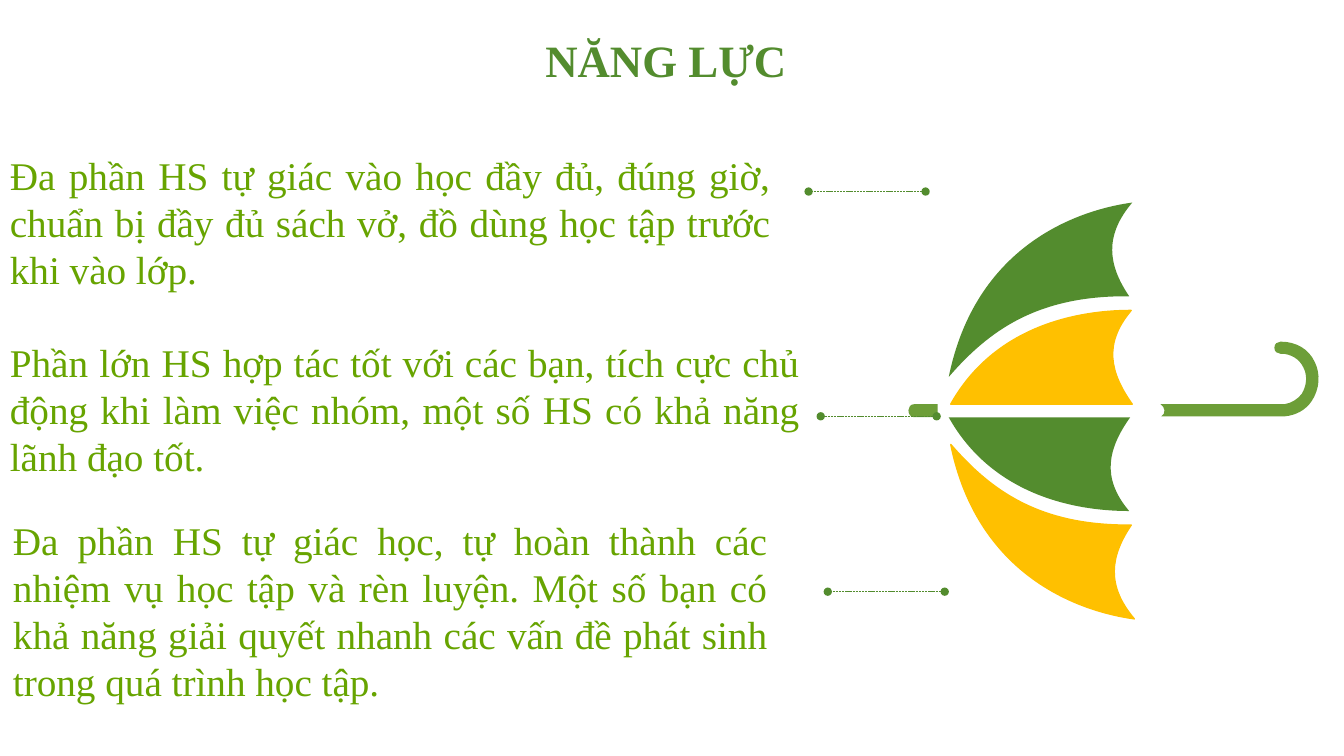
import pptx
import pptx.util
import pptx.dml.color
import pptx.enum.dml
import pptx.enum.shapes
import pptx.enum.text
import pptx.oxml
import pptx.oxml.ns
from lxml import etree

PX = 9144
SLIDE_WIDTH, SLIDE_HEIGHT = 1333, 750
FONT = "Times New Roman"
DARK_GREEN = pptx.dml.color.RGBColor(0x53, 0x8C, 0x2E)
YELLOW = pptx.dml.color.RGBColor(0xFF, 0xC0, 0x00)
HANDLE_GREEN = pptx.dml.color.RGBColor(0x6D, 0x9E, 0x38)
TEXT_GREEN = pptx.dml.color.RGBColor(0x67, 0xA4, 0x00)

MIRROR_SUM = 815

OUTER_PANEL = [(941, 374), (967, 246, 1065, 209, 1123, 201),
               (1095, 234, 1099, 263, 1120, 294), (1028, 293, 980, 329, 941, 374)]
INNER_PANEL = [(941, 401), (983, 326, 1062, 308, 1120, 308),
               (1092, 341, 1099, 370, 1121, 401)]
TIP = [(907, 401), (930, 401), (930, 414), (907, 414),
       (903, 414, 901, 411, 901, 407), (901, 404, 903, 401, 907, 401)]
HOOK = [(1270, 339), (1271, 339), (1285, 339, 1298, 346, 1304, 359),
        (1310, 371, 1309, 386, 1301, 398), (1295, 407, 1285, 412, 1275, 413),
        (1152, 413), (1154, 412, 1155, 410, 1155, 407),
        (1155, 405, 1153, 402, 1151, 401), (1267, 401), (1274, 401),
        (1281, 400, 1287, 396, 1291, 391), (1296, 383, 1297, 373, 1293, 365),
        (1289, 356, 1280, 351, 1271, 351), (1270, 351),
        (1267, 351, 1264, 349, 1264, 345), (1264, 341, 1267, 339, 1270, 339)]

PARAGRAPHS = [
    (0, 145, 774, 151, "Đa phần HS tự giác vào học đầy đủ, đúng giờ, chuẩn bị đầy đủ "
                       "sách vở, đồ dùng học tập trước khi vào lớp."),
    (0, 331, 803, 151, "Phần lớn HS hợp tác tốt với các bạn, tích cực chủ động khi làm "
                       "việc nhóm, một số HS có khả năng lãnh đạo tốt."),
    (3, 507, 768, 199, "Đa phần HS tự giác học, tự hoàn thành các nhiệm vụ học tập và "
                       "rèn luyện. Một số bạn có khả năng giải quyết nhanh các vấn đề "
                       "phát sinh trong quá trình học tập."),
]
POINTERS = [(918, 802, 190), (929, 814, 413), (937, 821, 587)]


def px(value):
    return pptx.util.Emu(value * PX)


def mirrored(outline):
    return [tuple(MIRROR_SUM - v if i % 2 else v for i, v in enumerate(step))
            for step in outline]


def shifted(outline, dx):
    return [tuple(v if i % 2 else v + dx for i, v in enumerate(step))
            for step in outline]


def bend(part, outline):
    left = min(step[-2] for step in outline)
    top = min(step[-1] for step in outline)
    segments = list(part._element.iter(pptx.oxml.ns.qn("a:lnTo")))
    for segment, step in zip(segments, outline[1:]):
        if len(step) == 6:
            curve = etree.Element(pptx.oxml.ns.qn("a:cubicBezTo"))
            for x, y in zip(step[::2], step[1::2]):
                etree.SubElement(curve, pptx.oxml.ns.qn("a:pt"),
                                 x=str(px(x - left)), y=str(px(y - top)))
            segment.getparent().replace(segment, curve)


def add_outline(umbrella, outline, color, edged=False):
    corners = [(px(step[-2]), px(step[-1])) for step in outline]
    builder = umbrella.shapes.build_freeform(*corners[0])
    builder.add_line_segments(corners[1:], close=True)
    part = builder.convert_to_shape()
    bend(part, outline)
    part.shadow.inherit = False
    part.fill.solid()
    part.fill.fore_color.rgb = color
    if edged:
        part.line.color.rgb = color
        part.line.width = pptx.util.Pt(1)
    else:
        part.line.fill.background()


def add_umbrella(slide):
    umbrella = slide.shapes.add_group_shape()
    add_outline(umbrella, OUTER_PANEL, DARK_GREEN)
    add_outline(umbrella, shifted(INNER_PANEL, 2), YELLOW, edged=True)
    add_outline(umbrella, mirrored(INNER_PANEL), DARK_GREEN)
    add_outline(umbrella, shifted(mirrored(OUTER_PANEL), 2), YELLOW, edged=True)
    add_outline(umbrella, TIP, HANDLE_GREEN)
    add_outline(umbrella, HOOK, HANDLE_GREEN)


def add_text(slide, left, top, width, height, text, size, color, align, bold=False):
    box = slide.shapes.add_textbox(px(left), px(top), px(width), px(height))
    frame = box.text_frame
    frame.word_wrap = True
    frame.auto_size = pptx.enum.text.MSO_AUTO_SIZE.SHAPE_TO_FIT_TEXT
    paragraph = frame.paragraphs[0]
    paragraph.text = text
    paragraph.alignment = align
    paragraph.font.name = FONT
    paragraph.font.size = pptx.util.Pt(size)
    paragraph.font.bold = bold
    paragraph.font.color.rgb = color


def add_pointer(slide, right, left, y):
    pointer = slide.shapes.add_connector(
        pptx.enum.shapes.MSO_CONNECTOR.STRAIGHT, px(right), px(y), px(left), px(y))
    pointer.line.color.rgb = DARK_GREEN
    pointer.line.width = pptx.util.Pt(0.5)
    pointer.line.dash_style = pptx.enum.dml.MSO_LINE.SQUARE_DOT
    line = pointer.line._get_or_add_ln()
    for end in ("a:headEnd", "a:tailEnd"):
        etree.SubElement(line, pptx.oxml.ns.qn(end), type="oval")
    etree.SubElement(pointer._element.spPr, pptx.oxml.ns.qn("a:effectLst"))


def main():
    deck = pptx.Presentation()
    deck.slide_width, deck.slide_height = px(SLIDE_WIDTH), px(SLIDE_HEIGHT)
    slide = deck.slides.add_slide(deck.slide_layouts[6])
    add_umbrella(slide)
    for left, top, width, height, text in PARAGRAPHS:
        add_text(slide, left, top, width, height, text, 28, TEXT_GREEN,
                 pptx.enum.text.PP_ALIGN.JUSTIFY)
    for right, left, y in POINTERS:
        add_pointer(slide, right, left, y)
    add_text(slide, 404, 28, 513, 64, "NĂNG LỰC", 32, DARK_GREEN,
             pptx.enum.text.PP_ALIGN.CENTER, bold=True)
    deck.save("out.pptx")


if __name__ == "__main__":
    main()
